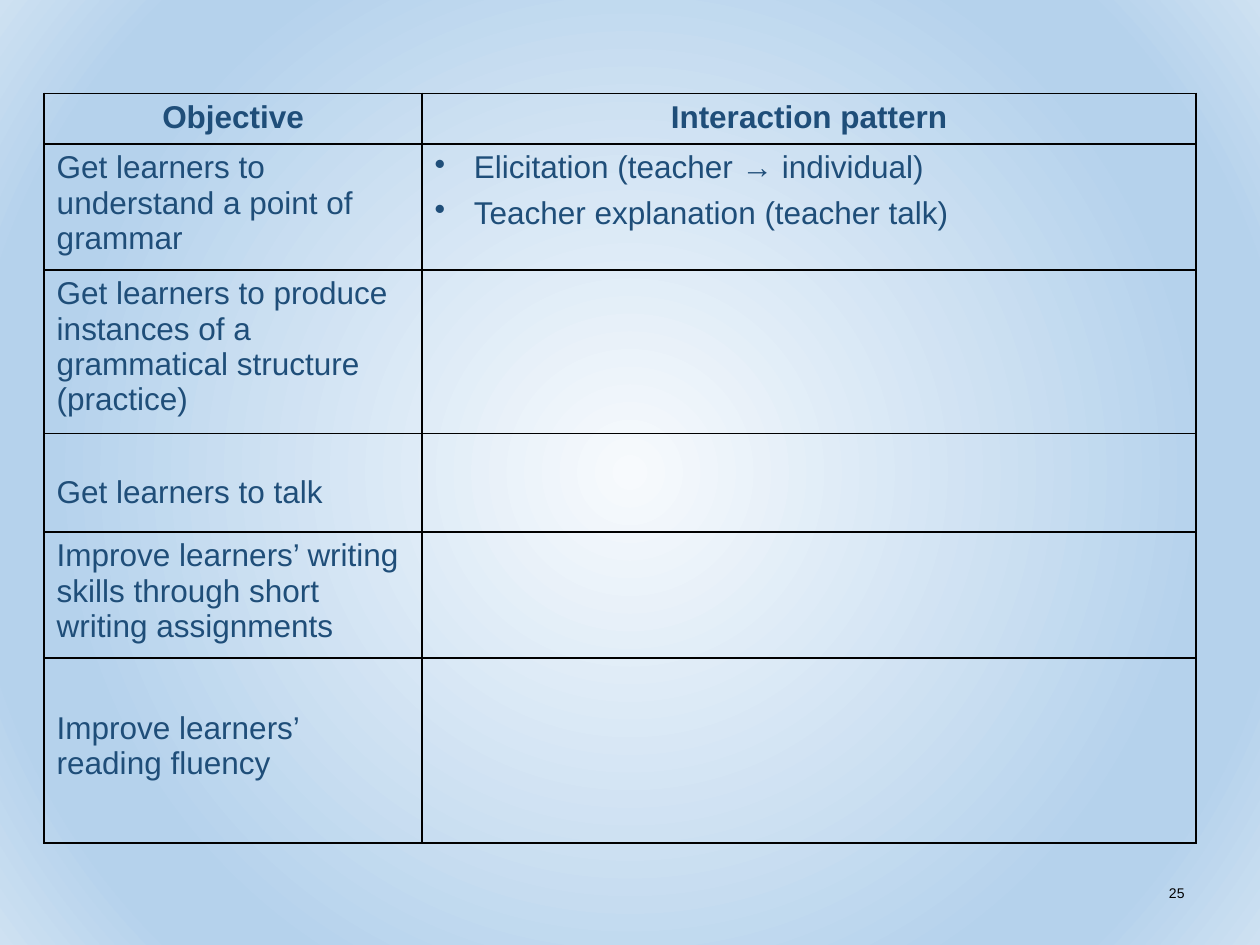
from dataclasses import dataclass

from lxml import etree
from pptx import Presentation
from pptx.dml.color import RGBColor
from pptx.enum import text as t
from pptx.oxml import parse_xml
from pptx.oxml.ns import nsdecls, qn
from pptx.util import Cm, Pt


@dataclass(frozen=True)
class Theme:
    font: str = "Arial"
    ink: str = "1F4E79"
    black: str = "000000"
    body: int = 18
    small: int = 8
    gap: int = 6
    glow: tuple = ((0, "F7FAFD"), (74, "B5D2EC"), (83, "B5D2EC"), (100, "CEE1F2"))


@dataclass(frozen=True)
class Row:
    goal: str
    height: float
    ways: tuple = ()
    drop: float = 0.13  # top margin of the goal cell, cm
    head: bool = False


THEME = Theme()
COLS = (7.62, 15.6)
ROWS = (
    Row("Objective", 1.02, ("Interaction pattern",), head=True),
    Row("Get learners to understand a point of grammar", 2.54,
        ("Elicitation (teacher → individual)", "Teacher explanation (teacher talk)")),
    Row("Get learners to produce instances of a grammatical structure (practice)", 3.3),
    Row("Get learners to talk", 1.98, drop=0.84),
    Row("Improve learners’ writing skills through short writing assignments", 2.54),
    Row("Improve learners’ reading fluency", 3.73, drop=1.07),
)


def paint(slide) -> None:
    """Give the slide a round gradient that spreads from its centre."""
    slide.background.fill.solid()
    old = slide.element.find(".//" + qn("a:solidFill"))
    stops = "".join(
        f'<a:gs pos="{pos * 1000}"><a:srgbClr val="{tint}"/></a:gs>'
        for pos, tint in THEME.glow)
    old.getparent().replace(old, parse_xml(
        f'<a:gradFill {nsdecls("a")} rotWithShape="1"><a:gsLst>{stops}</a:gsLst>'
        '<a:path path="circle"><a:fillToRect l="50000" t="50000" r="50000" b="50000"/>'
        '</a:path></a:gradFill>'))


def write(para, words: str, size: int, tint: str, bold: bool = False) -> None:
    run = para.add_run()
    run.text = words
    run.font.name = THEME.font
    run.font.size = Pt(size)
    run.font.bold = bold
    run.font.color.rgb = RGBColor.from_string(tint)


def bullet(para) -> None:
    props = para._p.get_or_add_pPr()
    props.set("marL", str(Cm(0.79)))
    props.set("indent", str(-Cm(0.79)))
    etree.SubElement(props, qn("a:buChar")).set("char", "•")


def frame(cell) -> None:
    """Leave the cell unfilled, with a thin black line on each side."""
    cell.fill.background()
    props = cell._tc.get_or_add_tcPr()
    for place, side in enumerate("LRTB"):
        props.insert(place, parse_xml(
            f'<a:ln{side} {nsdecls("a")} w="{Pt(1)}"><a:solidFill>'
            f'<a:srgbClr val="{THEME.black}"/></a:solidFill></a:ln{side}>'))


def fill(cell, lines: tuple, head: bool, dots: bool) -> None:
    for num, line in enumerate(lines):
        para = cell.text_frame.add_paragraph() if num else cell.text_frame.paragraphs[0]
        para.space_after = Pt(THEME.gap)
        if head:
            para.space_before = Pt(THEME.gap)
            para.alignment = t.PP_ALIGN.CENTER
        if dots:
            bullet(para)
        write(para, line, THEME.body, THEME.ink, head)


def grid(slide) -> None:
    table = slide.shapes.add_table(
        len(ROWS), len(COLS), Cm(0.89), Cm(1.88),
        Cm(sum(COLS)), Cm(sum(row.height for row in ROWS))).table
    table.first_row = table.horz_banding = False
    for col, width in zip(table.columns, COLS):
        col.width = Cm(width)
    for num, row in enumerate(ROWS):
        table.rows[num].height = Cm(row.height)
        goal, ways = table.cell(num, 0), table.cell(num, 1)
        for cell in (goal, ways):
            frame(cell)
        goal.margin_top = Cm(row.drop)
        fill(goal, (row.goal,), row.head, False)
        fill(ways, row.ways, row.head, not row.head)


def page(slide, num: str) -> None:
    box = slide.shapes.add_textbox(Cm(18.21), Cm(17.35), Cm(5.92), Cm(1.32)).text_frame
    box.word_wrap = True
    box.vertical_anchor = t.MSO_ANCHOR.MIDDLE
    para = box.paragraphs[0]
    para.alignment = t.PP_ALIGN.RIGHT
    write(para, num, THEME.small, THEME.black)


def main() -> None:
    deck = Presentation()
    deck.slide_width, deck.slide_height = Cm(25.4), Cm(19.05)
    slide = deck.slides.add_slide(deck.slide_layouts[6])
    paint(slide)
    grid(slide)
    page(slide, "25")
    deck.save("out.pptx")


if __name__ == "__main__":
    main()
